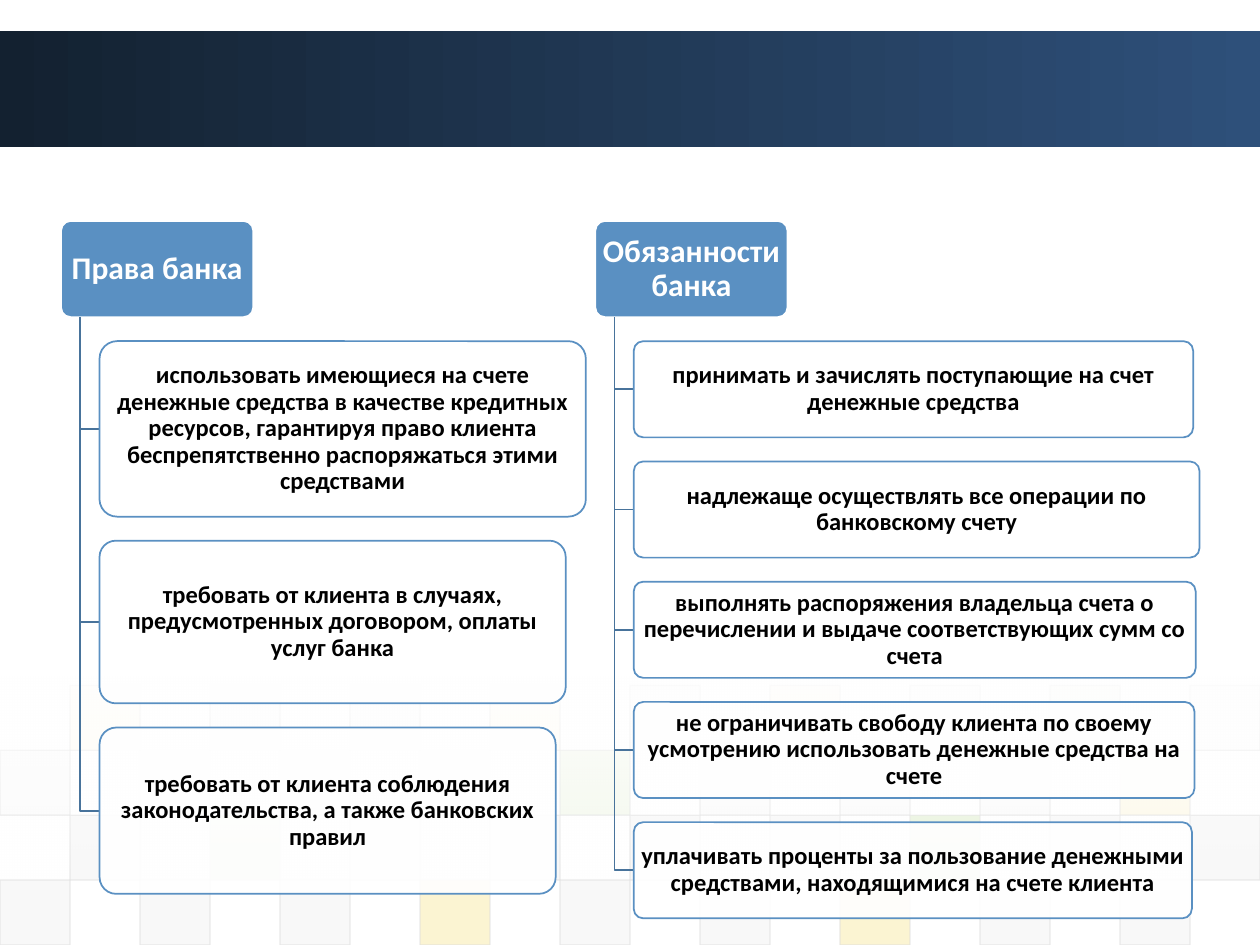
from pptx import Presentation
from pptx.dml.color import RGBColor
from pptx.enum.shapes import MSO_SHAPE
from pptx.enum.text import MSO_ANCHOR, PP_ALIGN
from pptx.oxml.ns import qn
from pptx.util import Inches, Pt
from lxml import etree

RECT = MSO_SHAPE.RECTANGLE
ROUNDED = MSO_SHAPE.ROUNDED_RECTANGLE
MIDDLE = MSO_ANCHOR.MIDDLE
CENTER = PP_ALIGN.CENTER
color = RGBColor.from_string

deck = Presentation()
deck.slide_width = Inches(10)
deck.slide_height = Inches(7.5)
slide = deck.slides.add_slide(deck.slide_layouts[6])
PX = deck.slide_width / 100
PY = deck.slide_height / 100


def add_block(kind, left, top, width, height, fill, line=None, weight=1, alphas=()):
    block = slide.shapes.add_shape(
        kind, int(left * PX), int(top * PY), int(width * PX), int(height * PY))
    block.shadow.inherit = False
    if isinstance(fill, tuple):
        start, end, angle = fill
        block.fill.gradient()
        block.fill.gradient_angle = angle
        for stop, stop_color in zip(block.fill.gradient_stops, (start, end)):
            stop.color.rgb = color(stop_color)
    else:
        block.fill.solid()
        block.fill.fore_color.rgb = color(fill)
    if line:
        block.line.color.rgb = color(line)
        block.line.width = Pt(weight)
    else:
        block.line.fill.background()
    tints = list(block._element.spPr.iter(qn("a:srgbClr")))
    for tint, alpha in zip(tints, alphas):
        etree.SubElement(tint, qn("a:alpha")).set("val", str(alpha * 1000))
    return block


def write_text(block, text, size, font_color, inset):
    frame = block.text_frame
    frame.word_wrap = True
    frame.vertical_anchor = MIDDLE
    frame.margin_left = frame.margin_right = Inches(inset)
    frame.margin_top = frame.margin_bottom = Inches(0.02)
    frame.text = text
    paragraph = frame.paragraphs[0]
    paragraph.alignment = CENTER
    paragraph.line_spacing = 0.9
    font = paragraph.runs[0].font
    font.name = "Calibri"
    font.size = Pt(size)
    font.bold = True
    font.color.rgb = color(font_color)


add_block(RECT, 0, 3.3, 100, 12.3, ("132130", "2E507A", 0))

TILE_COLORS = {"L": "EAEAEA", "D": "DDDDDD", "Y": "EFC821", "G": "8AC246"}
MOSAIC = [
    (1, 5, "YLLYDYLGL"),
    (0, 10, "DDDDGDDDY"),
    (1, 20, "DGDDDDGDD"),
    (0, 20, "DDDYDDYDD"),
]
TILE_WIDTH = 100 / 18
TILE_HEIGHT = 6.87
MOSAIC_TOP = 100 - len(MOSAIC) * TILE_HEIGHT
for row, (first_column, opacity, tiles) in enumerate(MOSAIC):
    for step, tile in enumerate(tiles):
        add_block(RECT, (first_column + 2 * step) * TILE_WIDTH,
                  MOSAIC_TOP + row * TILE_HEIGHT, TILE_WIDTH, TILE_HEIGHT,
                  TILE_COLORS[tile], "DDDDDD", 0.75, (opacity, 60))
add_block(RECT, 0, 71.6, 100, 21.6, ("FFFFFF", "FFFFFF", 270), alphas=(90, 0))

HEAD_TOP = 23.38
HEAD_WIDTH = 15.25
HEAD_HEIGHT = 10.18
GAP = HEAD_HEIGHT / 4
INDENT = HEAD_WIDTH / 10
BRANCHES = [
    ("Права банка", 4.85, [
        (38.6, 18.57, "использовать имеющиеся на счете денежные средства в качестве кредитных ресурсов, гарантируя право клиента беспрепятственно распоряжаться этими средствами"),
        (37, 17.22, "требовать от клиента в случаях, предусмотренных договором, оплаты услуг банка"),
        (36.2, 17.6, "требовать от клиента соблюдения законодательства, а также банковских правил"),
    ]),
    ("Обязанности банка", 47.25, [
        (44.4, HEAD_HEIGHT, "принимать и зачислять поступающие на счет денежные средства"),
        (44.9, HEAD_HEIGHT, "надлежаще осуществлять все операции по банковскому счету"),
        (44.6, HEAD_HEIGHT, "выполнять распоряжения владельца счета о перечислении и выдаче соответствующих сумм со счета"),
        (44.5, HEAD_HEIGHT, "не ограничивать свободу клиента по своему усмотрению использовать денежные средства на счете"),
        (44.3, HEAD_HEIGHT, "уплачивать проценты за пользование денежными средствами, находящимися на счете клиента"),
    ]),
]
for title, left, duties in BRANCHES:
    head = add_block(ROUNDED, left, HEAD_TOP, HEAD_WIDTH, HEAD_HEIGHT, "5A90C2", "FFFFFF")
    head.adjustments[0] = 0.1
    write_text(head, title, 18, "FFFFFF", 0)
    trunk = left + INDENT
    duty_left = trunk + INDENT
    head_bottom = HEAD_TOP + HEAD_HEIGHT
    top = head_bottom + GAP
    for width, height, text in duties:
        middle = top + height / 2
        outline = slide.shapes.build_freeform(int(trunk * PX), int(head_bottom * PY))
        outline.add_line_segments(
            [(int(trunk * PX), int(middle * PY)), (int(duty_left * PX), int(middle * PY))],
            close=False)
        elbow = outline.convert_to_shape()
        elbow.shadow.inherit = False
        elbow.fill.background()
        elbow.line.color.rgb = color("48739B")
        elbow.line.width = Pt(1)
        duty = add_block(ROUNDED, duty_left, top, width, height, "FFFFFF", "5A90C2", alphas=(90,))
        duty.adjustments[0] = 0.1
        write_text(duty, text, 14, "000000", 0.03)
        top += height + GAP

deck.save("out.pptx")
